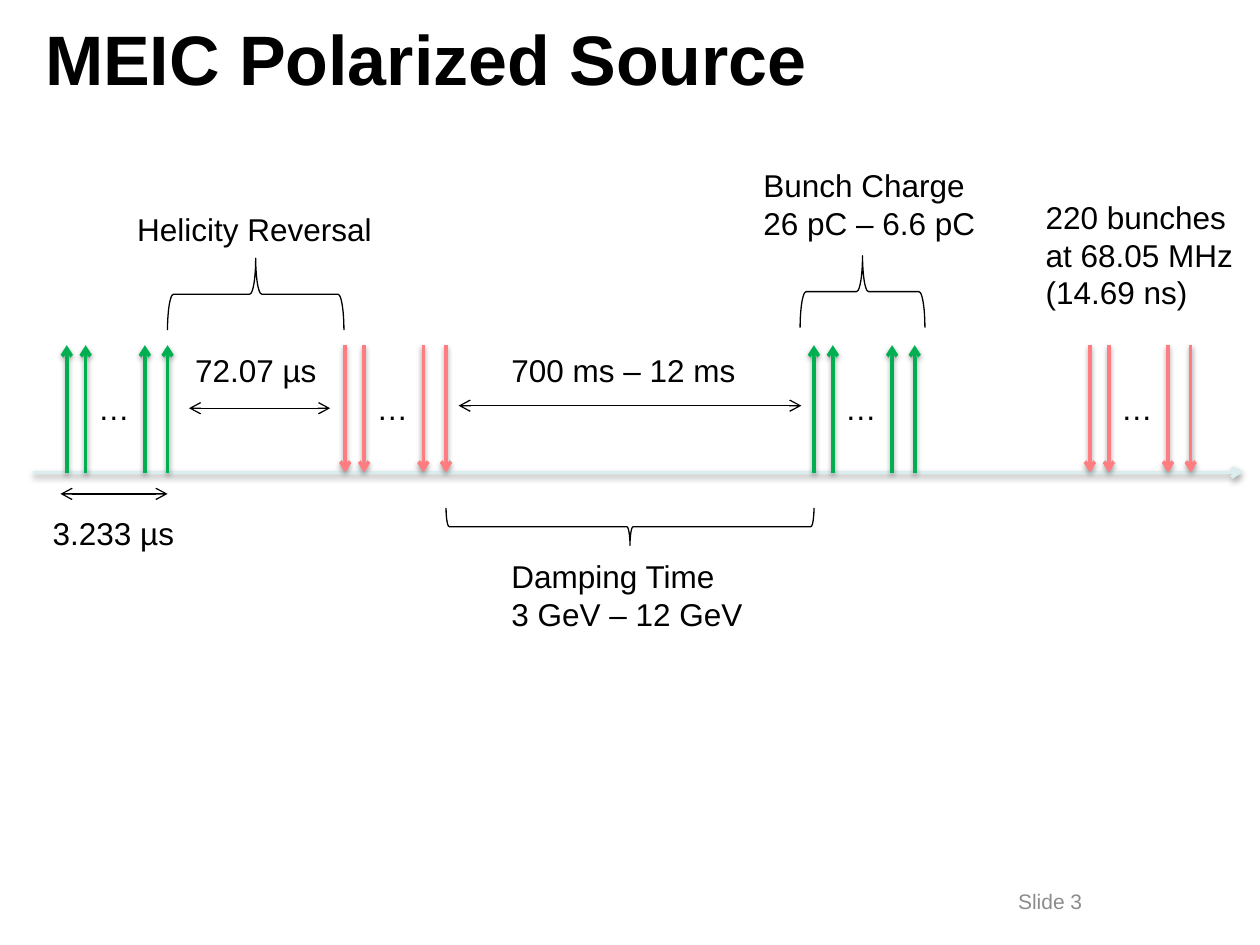
from dataclasses import dataclass

from lxml.etree import SubElement
from pptx import Presentation
from pptx.dml.color import RGBColor
from pptx.enum.shapes import MSO_CONNECTOR as Connector, MSO_SHAPE as Shape
from pptx.enum.text import MSO_ANCHOR as Anchor, MSO_AUTO_SIZE as AutoSize, PP_ALIGN as Align
from pptx.oxml.ns import qn
from pptx.util import Inches, Pt


@dataclass(frozen=True)
class Theme:
    font: str = "Arial"
    ink: str = "000000"
    muted: str = "8C8C8C"
    axis: str = "DAEDEF"
    up: str = "00B050"
    down: str = "FF7C80"
    title_size: float = 40
    label_size: float = 18
    footer_size: float = 12
    thin: float = 0.75
    thick: float = 2


class TimelineSlide:
    BASE, TOP = 3.75, 2.74
    BUNCH_OFFSETS = (0, 0.15, 0.62, 0.8)

    def __init__(self, slide, theme):
        self.shapes = slide.shapes
        self.theme = theme

    def text(self, box, lines, size=None, color=None, bold=False,
             align=Align.LEFT, anchor=Anchor.TOP, wrap=False, shapes=None):
        textbox = (shapes or self.shapes).add_textbox(*map(Inches, box))
        frame = textbox.text_frame
        frame.word_wrap = wrap
        frame.auto_size = AutoSize.NONE if wrap else AutoSize.SHAPE_TO_FIT_TEXT
        frame.vertical_anchor = anchor
        for index, line in enumerate(lines):
            paragraph = frame.paragraphs[0] if index == 0 else frame.add_paragraph()
            paragraph.alignment = align
            run = paragraph.add_run()
            run.text = line
            run.font.name = self.theme.font
            run.font.size = Pt(size or self.theme.label_size)
            run.font.bold = bold
            run.font.color.rgb = RGBColor.from_string(color or self.theme.ink)

    def arrow(self, start, end, color=None, width=None, both=False,
              shadow=False, shapes=None):
        connector = (shapes or self.shapes).add_connector(
            Connector.STRAIGHT, *map(Inches, (*start, *end)))
        connector.line.color.rgb = RGBColor.from_string(color or self.theme.ink)
        connector.line.width = Pt(width or self.theme.thin)
        properties = connector.line._get_or_add_ln()
        for tag in ("a:headEnd", "a:tailEnd") if both else ("a:tailEnd",):
            SubElement(properties, qn(tag), type="arrow")
        effects = SubElement(connector._element.spPr, qn("a:effectLst"))
        if shadow:
            outer = SubElement(effects, qn("a:outerShdw"), blurRad=str(Pt(3.1)),
                               dist=str(Pt(1.6)), dir="5400000", rotWithShape="0")
            black = SubElement(outer, qn("a:srgbClr"), val="000000")
            SubElement(black, qn("a:alpha"), val="38000")

    def bunch_train(self, left, upward):
        """Four bunch arrows with an ellipsis between the inner two."""
        group = self.shapes.add_group_shape().shapes
        color = self.theme.up if upward else self.theme.down
        start, end = (self.BASE, self.TOP) if upward else (self.TOP, self.BASE)
        for offset in self.BUNCH_OFFSETS:
            x = left + offset
            self.arrow((x, start), (x, end), color, self.theme.thick,
                       shadow=True, shapes=group)
        self.text((left + 0.15, 3.04, 0.45, 0.4), ["…"], shapes=group)

    def brace(self, left, top, span, depth, points_up):
        """A horizontal brace: a left brace turned about its centre."""
        x, y = left + (span - depth) / 2, top + (depth - span) / 2
        brace = self.shapes.add_shape(Shape.LEFT_BRACE, *map(Inches, (x, y, depth, span)))
        brace.rotation = 270
        if points_up:
            brace._element.spPr.xfrm.set("flipH", "1")
        brace.shadow.inherit = False
        brace.fill.background()
        brace.line.color.rgb = RGBColor.from_string(self.theme.ink)
        brace.line.width = Pt(self.theme.thin)


def main():
    presentation = Presentation()
    presentation.slide_width, presentation.slide_height = Inches(10), Inches(7.5)
    theme = Theme()
    timeline = TimelineSlide(
        presentation.slides.add_slide(presentation.slide_layouts[6]), theme)

    # Title
    timeline.text((0.26, 0, 9.48, 0.92), ["MEIC Polarized Source"], theme.title_size,
                  bold=True, anchor=Anchor.MIDDLE, wrap=True)

    # Time axis and bunch trains
    timeline.arrow((0.26, timeline.BASE), (9.86, timeline.BASE), theme.axis,
                   theme.thick, shadow=True)
    for left, upward in ((0.53, True), (6.46, True), (2.74, False), (8.65, False)):
        timeline.bunch_train(left, upward)

    # Interval arrows
    for left, right, y in ((1.5, 2.62, 3.24), (3.64, 6.36, 3.22), (0.48, 1.33, 3.92)):
        timeline.arrow((left, y), (right, y), both=True)

    # Braces: left, top, span, depth, direction
    for brace in ((3.54, 4.03, 2.92, 0.3, False),
                  (1.33, 2.05, 1.4, 0.57, True),
                  (6.35, 2.03, 0.99, 0.57, True)):
        timeline.brace(*brace)

    # Labels
    for box, lines in (
        ((0.99, 1.62, 2.08, 0.4), ["Helicity Reversal"]),
        ((1.45, 2.74, 1.17, 0.4), ["72.07 µs"]),
        ((3.96, 4.37, 2.05, 0.71), ["Damping Time", "3 GeV – 12 GeV"]),
        ((3.96, 2.74, 2, 0.4), ["700 ms – 12 ms"]),
        ((0.32, 4.03, 1.17, 0.4), ["3.233 µs"]),
        ((5.96, 1.27, 1.97, 0.71), ["Bunch Charge", "26 pC – 6.6 pC"]),
        ((8.2, 1.52, 1.7, 1.01), ["220 bunches", "at 68.05 MHz", "(14.69 ns)"]),
    ):
        timeline.text(box, lines)

    # Slide number
    timeline.text((7.17, 6.95, 2.33, 0.4), ["Slide 3"], theme.footer_size, theme.muted,
                  align=Align.CENTER, anchor=Anchor.MIDDLE, wrap=True)

    presentation.save("out.pptx")


if __name__ == "__main__":
    main()
